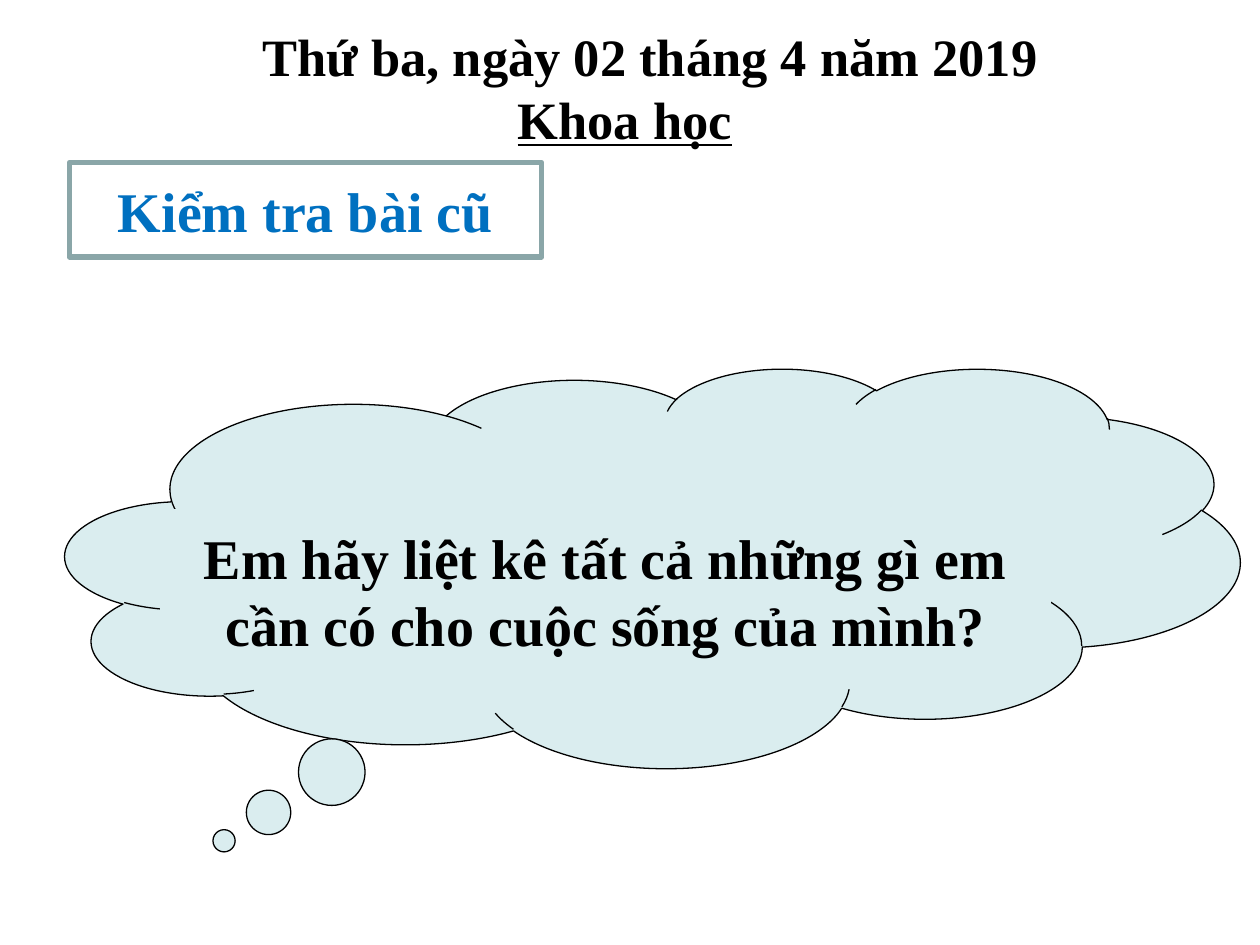
"""Build the opening review question slide of a science lesson."""
from dataclasses import dataclass

from pptx import Presentation
from pptx.dml.color import RGBColor
from pptx.enum.shapes import MSO_SHAPE as Shape
from pptx.enum.text import MSO_ANCHOR as Anchor, MSO_AUTO_SIZE as AutoSize, PP_ALIGN as Align
from pptx.util import Inches, Pt


@dataclass(frozen=True)
class Theme:
    font: str = "Times New Roman"
    ink: str = "000000"
    accent: str = "0070C0"
    border: str = "8AA6A8"
    cloud: str = "DAEDEF"
    heading_size: int = 30
    body_size: int = 32


THEME = Theme()


def write_text(shape, text, size, color=THEME.ink, align=Align.CENTER, underline=False):
    paragraph = shape.text_frame.paragraphs[0]
    paragraph.alignment = align
    run = paragraph.add_run()
    run.text = text
    font = run.font
    font.name, font.size, font.bold = THEME.font, Pt(size), True
    font.color.rgb = RGBColor.from_string(color)
    if underline:
        font.underline = True


def add_heading(slide, bounds, text, wrap=True, **style):
    box = slide.shapes.add_textbox(*map(Inches, bounds))
    box.text_frame.word_wrap = wrap
    box.text_frame.auto_size = AutoSize.SHAPE_TO_FIT_TEXT
    write_text(box, text, THEME.heading_size, **style)


def add_panel(slide, kind, bounds, fill=None, line=None, line_width=0.75):
    shape = slide.shapes.add_shape(kind, *map(Inches, bounds))
    shape.shadow.inherit = False
    if fill:
        shape.fill.solid()
        shape.fill.fore_color.rgb = RGBColor.from_string(fill)
    else:
        shape.fill.background()
    if line:
        shape.line.color.rgb = RGBColor.from_string(line)
        shape.line.width = Pt(line_width)
    else:
        shape.line.fill.background()
    shape.text_frame.word_wrap = True
    shape.text_frame.vertical_anchor = Anchor.MIDDLE
    return shape


def add_thought_cloud(slide, bounds, tail):
    cloud = add_panel(slide, Shape.CLOUD_CALLOUT, bounds, THEME.cloud, THEME.ink)
    cloud.adjustments[0], cloud.adjustments[1] = tail


def main():
    presentation = Presentation()
    presentation.slide_width, presentation.slide_height = Inches(10), Inches(7.5)
    slide = presentation.slides.add_slide(presentation.slide_layouts[6])

    add_heading(slide, (1, 0.14, 8.32, 0.61), "Thứ ba, ngày 02 tháng 4 năm 2019")
    add_heading(slide, (4.01, 0.64, 1.92, 0.61), "Khoa học",
                wrap=False, align=Align.LEFT, underline=True)

    review = add_panel(slide, Shape.RECTANGLE, (0.55, 1.29, 3.75, 0.75),
                       line=THEME.border, line_width=3)
    write_text(review, "Kiểm tra bài cũ", THEME.body_size, THEME.accent)

    add_thought_cloud(slide, (0.52, 2.92, 9.32, 3.17), tail=(-0.365, 0.684))
    question = add_panel(slide, Shape.RECTANGLE, (1.27, 4.04, 7.07, 1.29), THEME.cloud)
    write_text(question, "Em hãy liệt kê tất cả những gì em cần có cho cuộc sống của mình?",
               THEME.body_size)

    presentation.save("out.pptx")


if __name__ == "__main__":
    main()
